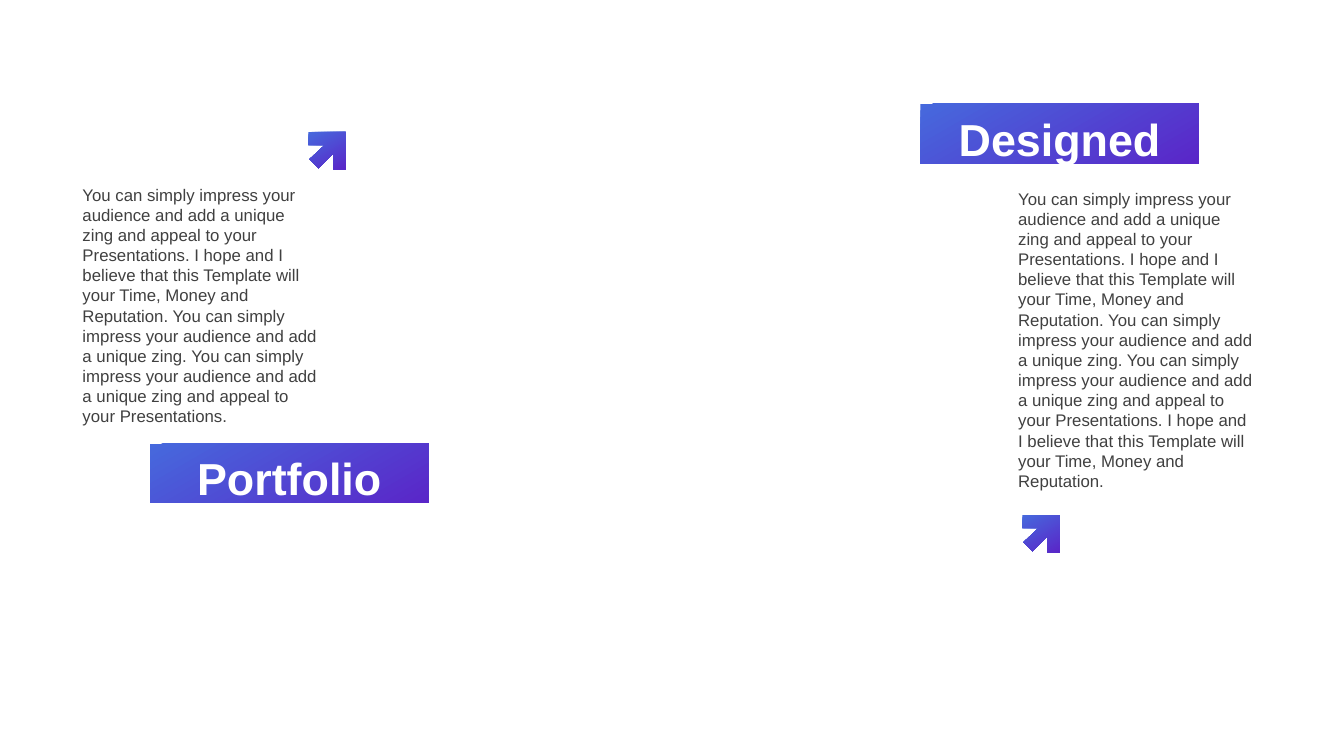
from pptx import Presentation
from pptx.dml.color import RGBColor
from pptx.enum.shapes import MSO_SHAPE
from pptx.enum.text import MSO_ANCHOR, MSO_AUTO_SIZE, PP_ALIGN
from pptx.util import Inches, Pt

RECTANGLE = MSO_SHAPE.RECTANGLE
MIDDLE = MSO_ANCHOR.MIDDLE
FIT_SHAPE = MSO_AUTO_SIZE.SHAPE_TO_FIT_TEXT
CENTER = PP_ALIGN.CENTER

COLORS = {"blue": "4669DD", "purple": "5A26C8", "white": "FFFFFF", "text": "404040"}
ARROW = [(0, 0), (0.37, 0), (0.37, 0.37), (0.25, 0.37), (0.25, 0.21),
         (0.1, 0.36), (0.01, 0.27), (0.16, 0.13), (0, 0.13)]
INTRO = (
    "You can simply impress your audience and add a unique zing and appeal to your "
    "Presentations."
)
HOPE = (
    "I hope and I believe that this Template will your Time, Money and Reputation."
)
SHORT_INTRO = "You can simply impress your audience and add a unique zing."
PORTFOLIO_TEXT = f"{INTRO} {HOPE} {SHORT_INTRO} {INTRO}"
DESIGNED_TEXT = f"{PORTFOLIO_TEXT} {HOPE}"


class SlideBuilder:
    font = "Arial"

    def __init__(self, prs):
        self.s = prs.slides.add_slide(prs.slide_layouts[6])

    def paint(self, sp):
        sp.shadow.inherit = False
        sp.line.fill.background()
        sp.fill.gradient()
        sp.fill.gradient_angle = 300
        for stop, name in zip(sp.fill.gradient_stops, ("blue", "purple")):
            stop.color.rgb = RGBColor.from_string(COLORS[name])

    def set_text(self, tf, text, size, color, bold=False):
        tf.word_wrap = True
        tf.text = text
        p = tf.paragraphs[0]
        for r in p.runs:
            r.font.name = self.font
            r.font.size = Pt(size)
            r.font.bold = bold
            r.font.color.rgb = RGBColor.from_string(COLORS[color])
        return p

    def banner(self, left, top, text):
        sp = self.s.shapes.add_shape(
            RECTANGLE, Inches(left), Inches(top), Inches(2.76), Inches(0.59))
        self.paint(sp)
        tf = sp.text_frame
        tf.vertical_anchor = MIDDLE
        tf.margin_top, tf.margin_bottom = Inches(0.09), 0
        self.set_text(tf, text, 32, "white", bold=True).alignment = CENTER

    def arrow(self, left, top):
        points = [(Inches(left + x), Inches(top + y)) for x, y in ARROW]
        outline = self.s.shapes.build_freeform(*points[0])
        outline.add_line_segments(points[1:], close=True)
        self.paint(outline.convert_to_shape())

    def body(self, left, top, height, text):
        sp = self.s.shapes.add_textbox(
            Inches(left), Inches(top), Inches(2.53), Inches(height))
        self.set_text(sp.text_frame, text, 12, "text")
        sp.text_frame.auto_size = FIT_SHAPE


def main():
    prs = Presentation()
    prs.slide_width, prs.slide_height = Inches(13.33), Inches(7.5)
    slide = SlideBuilder(prs)
    slide.banner(9.13, 1.03, "Designed")
    slide.banner(1.49, 4.4, "Portfolio")
    slide.arrow(10.14, 5.11)
    slide.arrow(3.06, 1.31)
    slide.body(10, 1.82, 3.13, DESIGNED_TEXT)
    slide.body(0.72, 1.78, 2.52, PORTFOLIO_TEXT)
    prs.save("out.pptx")


if __name__ == "__main__":
    main()
